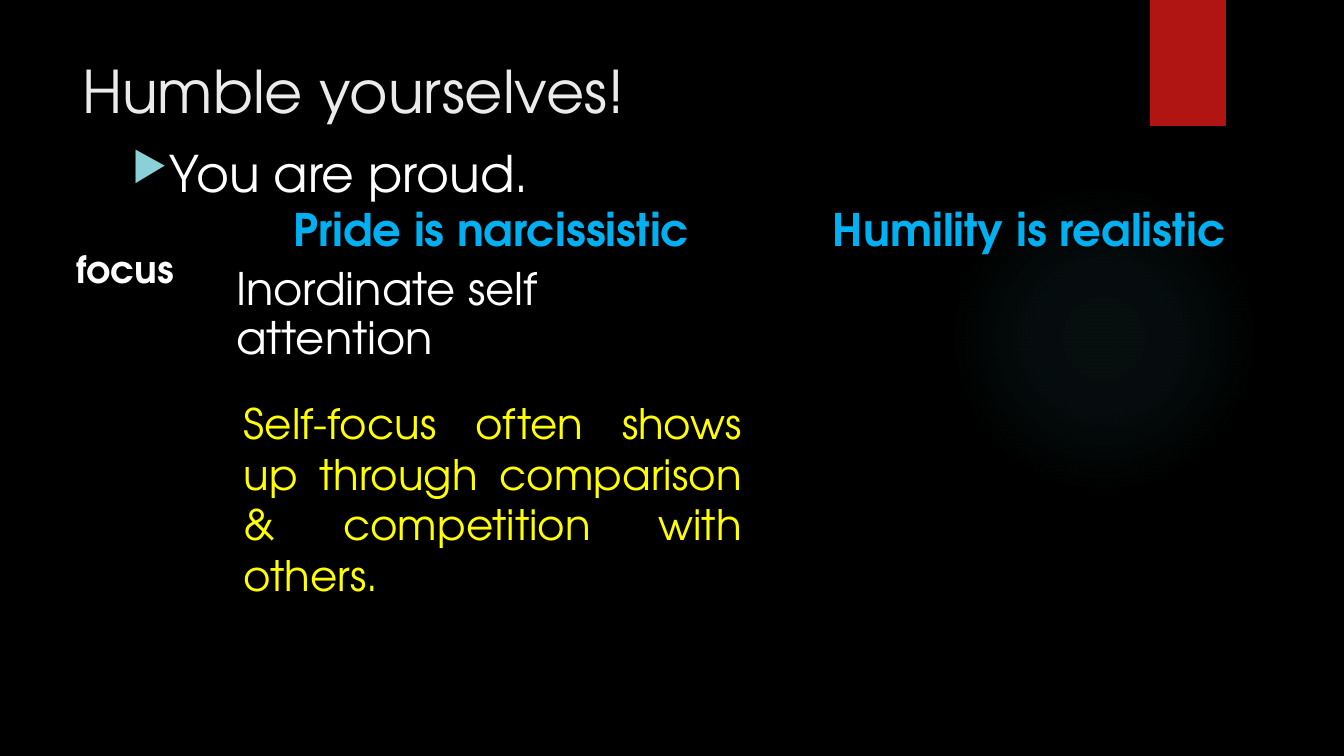
"""Builds the slide on pride and humility."""
from dataclasses import dataclass

from pptx import Presentation, oxml
from pptx import util as u
from pptx.dml.color import RGBColor
from pptx.enum import shapes, text
from pptx.oxml import ns

PX = 12192000 / 1344
NO_GRID = "{2D5ABB26-0587-4C30-8999-92F81FD0307C}"


@dataclass(frozen=True)
class Theme:
    """Colours, font and type sizes."""
    font: str = "TeX Gyre Adventor"
    back: str = "000000"
    ribbon: str = "B01513"
    glow: str = "50B9C1"
    bullet: str = "8AD0D6"
    heading: str = "EBEBEB"
    body: str = "FFFFFF"
    contrast: str = "00B0F0"
    remark: str = "FFFF00"
    heading_size: int = 42
    point_size: int = 36
    cell_size: int = 32
    remark_size: int = 30
    label_size: int = 27


def px(*lengths):
    """Turn pixel lengths into EMU."""
    return [u.Emu(round(length * PX)) for length in lengths]


def write(frame, words, font, size, color, bold=False,
          align=text.PP_ALIGN.LEFT, spacing=None, bullet=None):
    """Put one formatted paragraph into a text frame."""
    paragraph = frame.paragraphs[0]
    if bullet:
        indent = px(38)[0]
        props = paragraph._p.get_or_add_pPr()
        props.set("marL", str(indent))
        props.set("indent", str(-indent))
        for tag in (f'<a:buClr {ns.nsdecls("a")}><a:srgbClr val="{bullet}"/></a:buClr>',
                    f'<a:buSzPct {ns.nsdecls("a")} val="80000"/>',
                    f'<a:buChar {ns.nsdecls("a")} char="▶"/>'):
            props.append(oxml.parse_xml(tag))
    paragraph.alignment = align
    if spacing:
        paragraph.line_spacing = spacing
    run = paragraph.add_run()
    run.text = words
    run.font.name = font
    run.font.size = u.Pt(size)
    run.font.bold = bold
    run.font.color.rgb = RGBColor.from_string(color)


class Deck:
    """Holds the theme and the current slide."""

    def __init__(self, theme):
        """Start a presentation with one title-only slide."""
        self.theme = theme
        self.file = Presentation()
        self.file.slide_width, self.file.slide_height = px(1344, 756)
        self.slide = self.file.slides.add_slide(self.file.slide_layouts[5])
        fill = self.slide.background.fill
        fill.solid()
        fill.fore_color.rgb = RGBColor.from_string(theme.back)

    def title(self, words, box):
        """Move and fill the title placeholder."""
        heading = self.slide.shapes.title
        heading.left, heading.top, heading.width, heading.height = px(*box)
        heading.text_frame.vertical_anchor = text.MSO_ANCHOR.TOP
        write(heading.text_frame, words, self.theme.font,
              self.theme.heading_size, self.theme.heading)

    def shape(self, kind, box, color):
        """Add a plain filled shape."""
        item = self.slide.shapes.add_shape(kind, *px(*box))
        item.shadow.inherit = False
        item.line.fill.background()
        item.fill.solid()
        item.fill.fore_color.rgb = RGBColor.from_string(color)
        return item

    def glow(self, box, stops):
        """Add a circle that fades outwards through (position, opacity) stops."""
        circle = self.shape(shapes.MSO_SHAPE.OVAL, box, self.theme.glow)
        marks = "".join(
            f'<a:gs pos="{position * 1000}"><a:srgbClr val="{self.theme.glow}">'
            f'<a:alpha val="{opacity * 1000}"/></a:srgbClr></a:gs>'
            for position, opacity in stops)
        solid = circle.element.spPr.find(ns.qn("a:solidFill"))
        solid.getparent().replace(solid, oxml.parse_xml(
            f'<a:gradFill {ns.nsdecls("a")}><a:gsLst>{marks}</a:gsLst>'
            '<a:path path="circle"><a:fillToRect l="50000" t="50000" r="50000" b="50000"/>'
            '</a:path></a:gradFill>'))

    def text(self, words, box, size, color, **look):
        """Add a wrapping text box."""
        frame = self.slide.shapes.add_textbox(*px(*box)).text_frame
        frame.word_wrap = True
        write(frame, words, self.theme.font, size, color, **look)

    def table(self, box, columns, rows):
        """Add a table without grid or fill; a cell is None or (words, format)."""
        frame = self.slide.shapes.add_table(len(rows), len(columns), *px(*box))
        table = frame.table
        table.first_row = table.horz_banding = False
        next(frame.element.iter(ns.qn("a:tableStyleId"))).text = NO_GRID
        for column, width in zip(table.columns, px(*columns)):
            column.width = width
        for row, contents in enumerate(rows):
            for column, content in enumerate(contents):
                cell = table.cell(row, column)
                cell.fill.background()
                if content:
                    words, look = content
                    cell.margin_top = px(look.pop("top", 5))[0]
                    write(cell.text_frame, words, self.theme.font, **look)


def main():
    """Compose and save the slide."""
    theme = Theme()
    deck = Deck(theme)
    deck.glow((949, 184, 310, 310), [(0, 7), (36, 6), (69, 0), (100, 0)])
    deck.shape(shapes.MSO_SHAPE.RECTANGLE, (1150, 0, 76, 126), theme.ribbon)
    deck.title("Humble yourselves!", (72, 50, 1037, 92))
    deck.text("You are proud.", (122, 131, 1130, 584), theme.point_size,
              theme.body, spacing=1.1, bullet=theme.bullet)

    cell = dict(size=theme.cell_size, spacing=u.Pt(35))
    header = dict(cell, color=theme.contrast, bold=True, align=text.PP_ALIGN.CENTER)
    label = dict(size=theme.label_size, color=theme.body, bold=True,
                 align=text.PP_ALIGN.CENTER, spacing=0.85, top=0)
    deck.table((24, 201, 1278, 118), (202, 531, 545), [
        [None, ("Pride is narcissistic", dict(header)),
         ("Humility is realistic", dict(header))],
        [("focus", label),
         ("Inordinate self attention", dict(cell, color=theme.body)), None],
    ])
    deck.text("Self-focus often shows up through comparison & competition with others.",
              (234, 393, 518, 220), theme.remark_size, theme.remark,
              align=text.PP_ALIGN.JUSTIFY)
    deck.file.save("out.pptx")


if __name__ == "__main__":
    main()
